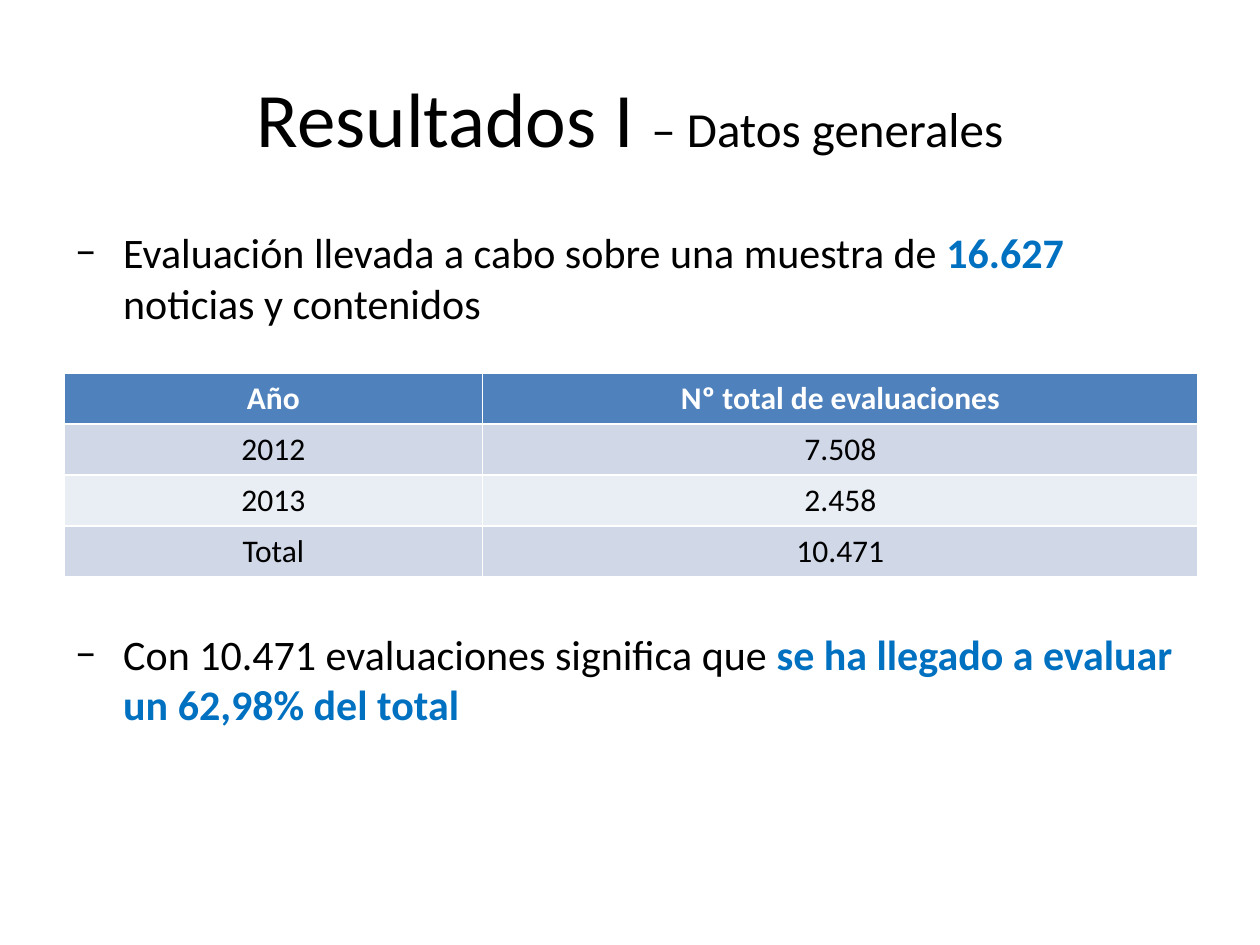
from pptx import Presentation
from pptx.dml.color import RGBColor
from pptx.enum.text import MSO_ANCHOR, PP_ALIGN
from pptx.oxml.ns import qn
from pptx.util import Inches, Pt
from lxml import etree

CENTER = PP_ALIGN.CENTER
MIDDLE = MSO_ANCHOR.MIDDLE
TOP = MSO_ANCHOR.TOP

BLACK = RGBColor(0x00, 0x00, 0x00)
WHITE = RGBColor(0xFF, 0xFF, 0xFF)
ACCENT = RGBColor(0x00, 0x70, 0xC0)
HEADER = RGBColor(0x4F, 0x81, 0xBD)
BANDS = (RGBColor(0xE9, 0xED, 0xF4), RGBColor(0xD0, 0xD8, 0xE8))

TITLE = [("Resultados I ", {"size": Pt(44)}),
         ("– Datos generales", {"size": Pt(28)})]
STRONG = {"color": ACCENT, "bold": True}
POINTS = [
    (5, [("Evaluación llevada a cabo sobre una muestra de ", {}),
         ("16.627", STRONG),
         (" noticias y contenidos", {})]),
    (172, [("Con 10.471 evaluaciones significa que ", {}),
           ("se ha llegado a evaluar un 62,98% del total", STRONG)]),
]
ROWS = [("Año", "Nº total de evaluaciones"),
        ("2012", "7.508"),
        ("2013", "2.458"),
        ("Total", "10.471")]


class SlideBuilder:
    base = {"name": "Calibri", "size": Pt(24), "bold": False, "color": BLACK}

    def __init__(self, slide):
        self.s = slide

    def place(self, sp, left, top, width, height):
        box = {"left": left, "top": top, "width": width, "height": height}
        for name, value in box.items():
            setattr(sp, name, Inches(value))

    def run(self, p, text, **style):
        r = p.add_run()
        r.text = text
        for name, value in {**self.base, **style}.items():
            if name == "color":
                r.font.color.rgb = value
            else:
                setattr(r.font, name, value)

    def title(self, runs, *box):
        sp = self.s.shapes.title
        self.place(sp, *box)
        tf = sp.text_frame
        tf.vertical_anchor = MIDDLE
        p = tf.paragraphs[0]
        p.alignment = CENTER
        for text, style in runs:
            self.run(p, text, **style)

    def bullets(self, points, *box):
        sp = self.s.shapes.add_textbox(*map(Inches, box))
        tf = sp.text_frame
        tf.word_wrap = True
        for i, (space, runs) in enumerate(points):
            p = tf.add_paragraph() if i else tf.paragraphs[0]
            p.space_before = Pt(space)
            pPr = p._p.get_or_add_pPr()
            pPr.set("marL", str(Inches(0.38)))
            pPr.set("indent", str(Inches(-0.38)))
            etree.SubElement(pPr, qn("a:buFont"), typeface="Calibri")
            etree.SubElement(pPr, qn("a:buChar"), char="−")
            for text, style in runs:
                self.run(p, text, **style)

    def table(self, rows, widths, left, top, row_height):
        size = (sum(widths), row_height * len(rows))
        frame = self.s.shapes.add_table(len(rows), len(widths),
                                        *map(Inches, (left, top, *size)))
        table = frame.table
        for column, width in zip(table.columns, widths):
            column.width = Inches(width)
        for i, row in enumerate(rows):
            for j, text in enumerate(row):
                self.cell(table.cell(i, j), text, i, j)

    def cell(self, cell, text, i, j):
        header = i == 0
        cell.fill.solid()
        cell.fill.fore_color.rgb = HEADER if header else BANDS[i % 2]
        cell.vertical_anchor = TOP
        if not header and j == 0:
            cell.vertical_anchor = MIDDLE
            margins = {"margin_left": 0.07, "margin_right": 0.07,
                       "margin_top": 0, "margin_bottom": 0}
            for name, value in margins.items():
                setattr(cell, name, Inches(value))
        p = cell.text_frame.paragraphs[0]
        p.alignment = CENTER
        self.run(p, text, size=Pt(18), bold=header,
                 color=WHITE if header else BLACK)


def main():
    prs = Presentation()
    prs.slide_width, prs.slide_height = Inches(10), Inches(7.5)
    s = SlideBuilder(prs.slides.add_slide(prs.slide_layouts[5]))
    s.title(TITLE, 0.5, 0.3, 9, 1.25)
    s.bullets(POINTS, 0.5, 1.75, 9, 4.95)
    s.table(ROWS, (3.32, 5.68), 0.51, 2.96, 0.405)
    prs.save("out.pptx")


if __name__ == "__main__":
    main()
